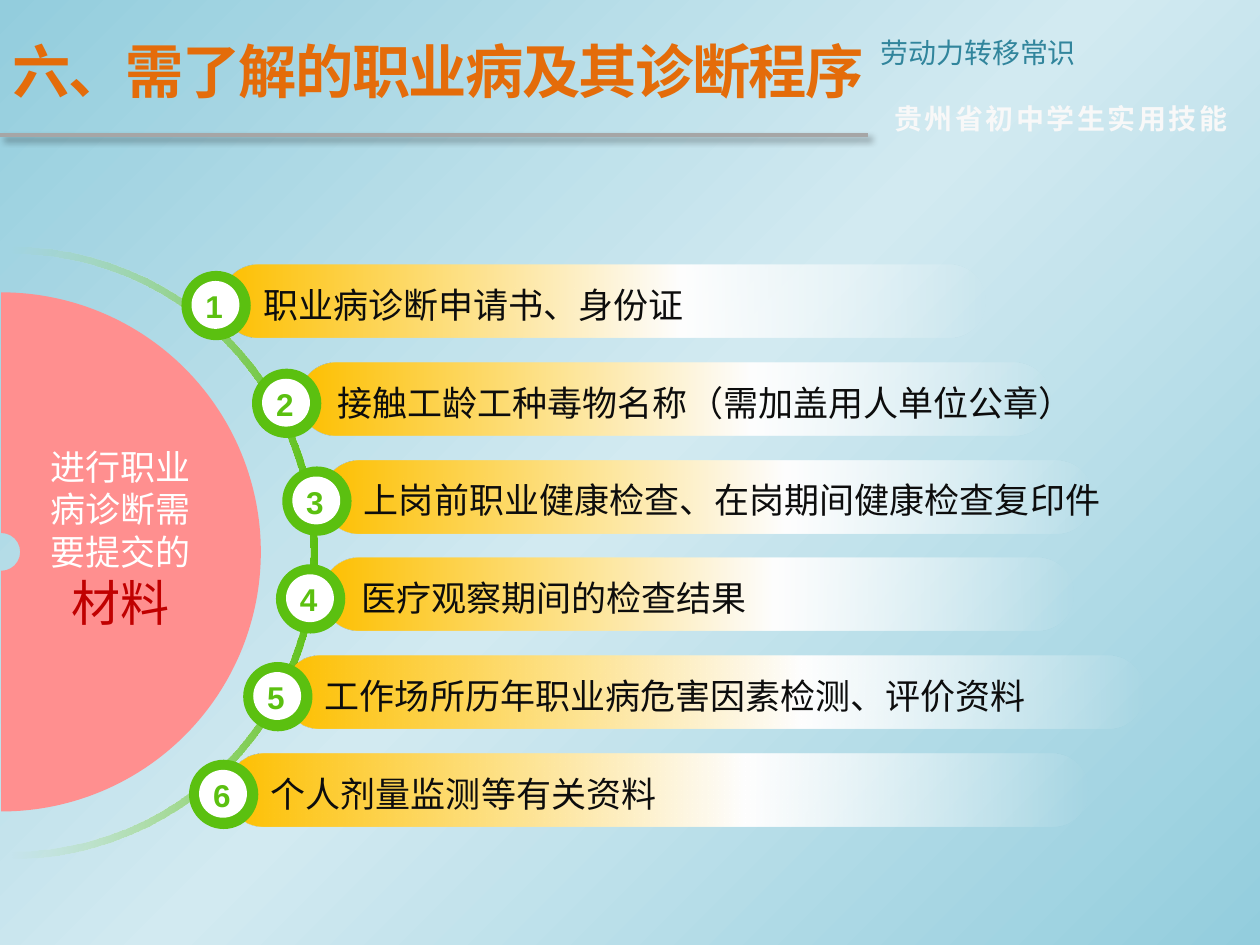
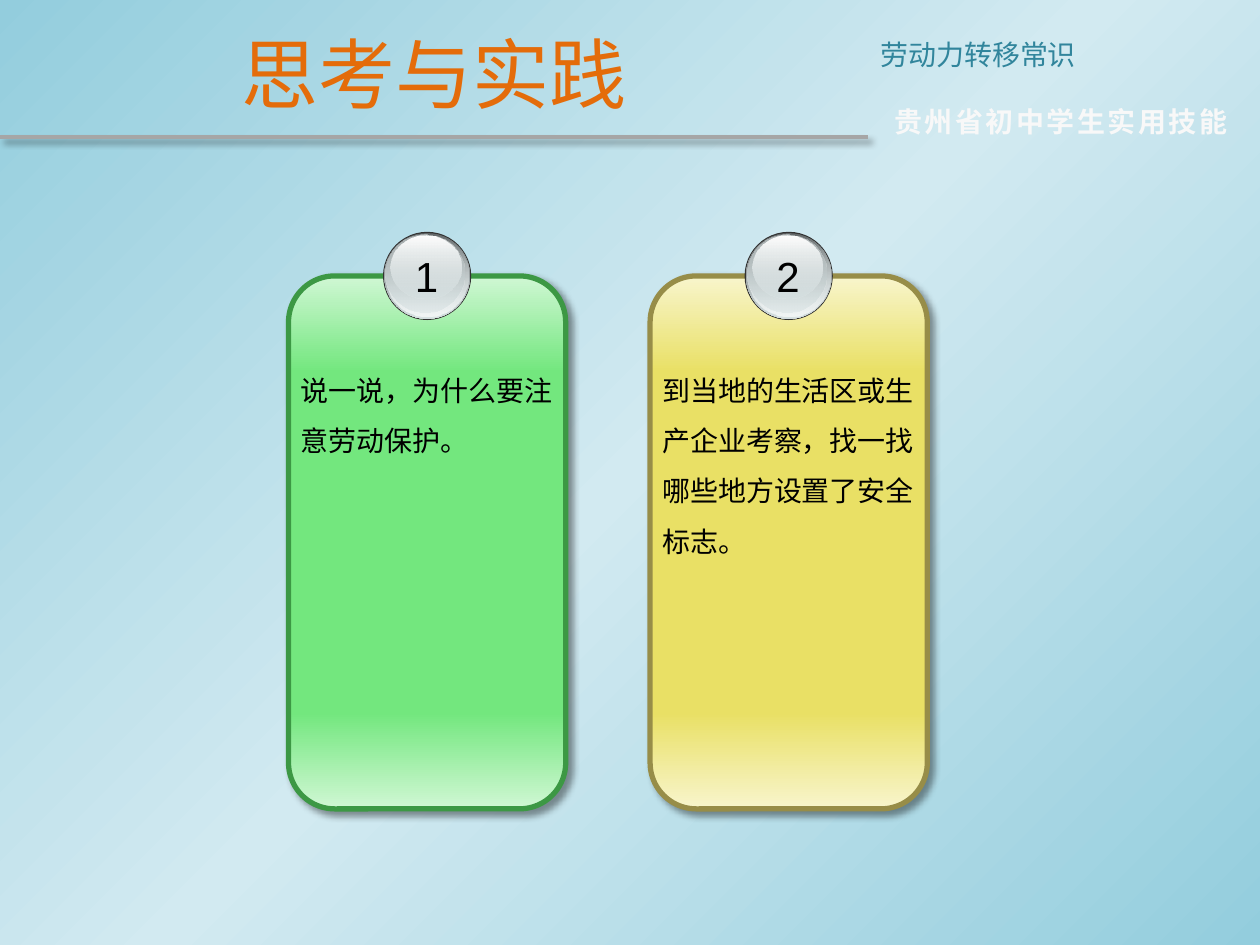
from dataclasses import dataclass
from math import ceil

from lxml.etree import SubElement
from pptx import Presentation
from pptx.dml.color import RGBColor
from pptx.enum.shapes import MSO_CONNECTOR, MSO_SHAPE
from pptx.enum.text import MSO_ANCHOR, MSO_AUTO_SIZE, PP_ALIGN
from pptx.oxml.ns import qn
from pptx.util import Inches, Pt


@dataclass(frozen=True)
class Box:
    left: float
    top: float
    width: float
    height: float

    def inner(self, left, top, width, height):
        """A box whose place is counted from this box's corner."""
        return Box(self.left + left, self.top + top, width, height)

    def emu(self):
        return [Inches(v) for v in (self.left, self.top, self.width, self.height)]


@dataclass(frozen=True)
class Style:
    size: float
    color: str
    font: str = "Noto Sans CJK SC"
    bold: bool = False
    spacing: float = 0


class Theme:
    # Gradient stops: position, colour, opacity in percent
    backdrop = [(0, "93CDDD", 100), (50, "D2EAF1", 100), (100, "93CDDD", 100)]
    bar = [(0, "FFC000", 100), (60, "FFFFFF", 100), (100, "FFFFFF", 0)]
    arc = [(0, "FFFFFF", 0), (100, "5BC010", 100)]
    green, white, pink, rule, rim = "5BC010", "FFFFFF", "FF8F8F", "A6A6A6", "333333"
    # Card colours: edge tint, body, outline
    green_card = ("D0F7D4", "73E77E", "3C9844")
    yellow_card = ("F8F5CC", "E9E065", "978D48")

    long_title = Style(33.3, "E46C0A", bold=True, spacing=-1)
    short_title = Style(44, "E46C0A")
    course = Style(16, "31859C")
    series = Style(16, "F8F8F8", bold=True, spacing=1.5)
    badge = Style(18, green, "Arial", True)
    label = Style(20, "0D0D0D")
    hub = Style(20, white)
    hub_key = Style(28, "C00000")
    body = Style(16, "000000")
    ball = Style(24, "000000", "Arial")


# Glossy ball layers: place inside the ball, then top and bottom stops
GLOSS = [
    ((0.01, 0.01, 0.68, 0.68), ("636869", 100), ("D6E1E2", 100)),
    ((0.02, 0.01, 0.66, 0.66), ("D6E1E2", 0), ("F1F5F5", 100)),
    ((0.02, 0.02, 0.63, 0.62), ("AAB2B3", 100), ("D6E1E2", 48)),
    ((0.06, 0.03, 0.56, 0.50), ("FFFFFF", 100), ("D6E1E2", 38)),
]

# Badge left, bar left, bar width, label left, label
MATERIALS = [
    (1.44, 1.76, 6.06, 1.99, "职业病诊断申请书、身份证"),
    (2.00, 2.38, 5.96, 2.58, "接触工龄工种毒物名称（需加盖用人单位公章）"),
    (2.24, 2.56, 6.11, 2.79, "上岗前职业健康检查、在岗期间健康检查复印件"),
    (2.19, 2.56, 5.96, 2.77, "医疗观察期间的检查结果"),
    (1.93, 2.25, 6.83, 2.48, "工作场所历年职业病危害因素检测、评价资料"),
    (1.50, 1.81, 6.83, 2.05, "个人剂量监测等有关资料"),
]

TASKS = [
    (Theme.green_card, "说一说，为什么要注意劳动保护。"),
    (Theme.yellow_card, "到当地的生活区或生产企业考察，找一找哪些地方设置了安全标志。"),
]


# Drawing helpers
def color_stop(parent, color, opacity):
    node = SubElement(parent, qn("a:srgbClr"), val=color)
    if opacity < 100:
        SubElement(node, qn("a:alpha"), val=str(opacity * 1000))


def gradient(owner, fill, stops, angle):
    """Fill with the stops; the angle runs clockwise."""
    fill.gradient()
    fill.gradient_angle = -angle % 360
    stop_list = next(owner.element.iter(qn("a:gsLst")))
    for old in list(stop_list):
        stop_list.remove(old)
    for position, color, opacity in stops:
        stop = SubElement(stop_list, qn("a:gs"), pos=str(position * 1000))
        color_stop(stop, color, opacity)


def add_preset(page, kind, box, fill, angle=0):
    """A shape filled with one colour or with gradient stops, without line or shadow."""
    shape = page.shapes.add_shape(kind, *box.emu())
    shape.shadow.inherit = False
    shape.line.fill.background()
    if isinstance(fill, str):
        shape.fill.solid()
        shape.fill.fore_color.rgb = RGBColor.from_string(fill)
    else:
        gradient(shape, shape.fill, fill, angle)
    return shape


def set_line(shape, color, width):
    shape.line.color.rgb = RGBColor.from_string(color)
    shape.line.width = Pt(width)


def drop_shadow(shape):
    properties = shape.element.spPr
    effects = properties.find(qn("a:effectLst"))
    if effects is None:
        effects = SubElement(properties, qn("a:effectLst"))
    shadow = SubElement(effects, qn("a:outerShdw"), blurRad=str(Pt(4)),
                        dist=str(Pt(3)), dir="2700000", algn="tl", rotWithShape="0")
    color_stop(shadow, "000000", 40)


def add_text(page, box, spans, align=PP_ALIGN.LEFT, wrap=True, grow=True,
             anchor=MSO_ANCHOR.TOP, line_spacing=None):
    frame = page.shapes.add_textbox(*box.emu()).text_frame
    frame.word_wrap = wrap
    frame.auto_size = MSO_AUTO_SIZE.SHAPE_TO_FIT_TEXT if grow else MSO_AUTO_SIZE.NONE
    frame.vertical_anchor = anchor
    para = frame.paragraphs[0]
    para.alignment = align
    para.line_spacing = line_spacing
    for words, style in spans:
        span = para.add_run()
        span.text = words
        span.font.size = Pt(style.size)
        span.font.bold = style.bold
        span.font.name = style.font
        span.font.color.rgb = RGBColor.from_string(style.color)
        properties = span.font._element
        SubElement(properties, qn("a:ea"), typeface=style.font)
        if style.spacing:
            properties.set("spc", str(round(style.spacing * 100)))


def add_right_half_ring(page, box, thickness, fill):
    """The right half of a ring that fills the square box."""
    ring = add_preset(page, MSO_SHAPE.BLOCK_ARC, box, fill)
    # Angles count in 60000ths of a degree, adjustments in 100000ths
    ring.adjustments[0] = 270 * 0.6
    ring.adjustments[1] = 90 * 0.6
    ring.adjustments[2] = thickness / box.width


# Shared backdrop and header
def add_page(deck):
    page = deck.slides.add_slide(deck.slide_layouts[6])
    gradient(page, page.background.fill, Theme.backdrop, 45)
    return page


def add_header(page, box, title, style, align):
    rule_y = Inches(box.top + box.height)
    rule = page.shapes.add_connector(
        MSO_CONNECTOR.STRAIGHT, Inches(box.left), rule_y, Inches(6.89), rule_y)
    set_line(rule, Theme.rule, 2.25)
    drop_shadow(rule)
    add_text(page, box.inner(6.89, 0.18, 3.11, 0.37),
             [("劳动力转移常识", Theme.course)], PP_ALIGN.JUSTIFY)
    add_text(page, box.inner(7, 0.71, 3, 0.37),
             [("贵州省初中学生实用技能", Theme.series)])
    add_text(page, box, [(title, style)], align, grow=False, anchor=MSO_ANCHOR.MIDDLE)


# Slide 1: hub on the left, numbered bars along its arc
def add_hub(page, box):
    add_right_half_ring(page, box, 0.06, Theme.arc)
    add_right_half_ring(page, box.inner(0.28, 0.36, 4.12, 4.12), 1.91, Theme.pink)


def add_material(page, box, number, badge_left, label_left, label):
    bar = add_preset(page, MSO_SHAPE.ROUNDED_RECTANGLE, box, Theme.bar)
    bar.adjustments[0] = 0.5
    badge = Box(badge_left, box.top + 0.05, 0.55, 0.55)
    add_preset(page, MSO_SHAPE.OVAL, badge, Theme.green)
    add_preset(page, MSO_SHAPE.OVAL, badge.inner(0.08, 0.08, 0.38, 0.38), Theme.white)
    add_text(page, badge.inner(0.09, 0.08, 0.34, 0.4),
             [(str(number), Theme.badge)], PP_ALIGN.CENTER, wrap=False)
    label_box = Box(label_left, box.top + 0.1, len(label) * 0.28 + 0.21, 0.44)
    add_text(page, label_box, [(label, Theme.label)], wrap=False)


def materials_slide(deck):
    page = add_page(deck)
    add_header(page, Box(0, 0.05, 6.97, 1.02), "六、需了解的职业病及其诊断程序",
               Theme.long_title, PP_ALIGN.LEFT)
    add_hub(page, Box(-2.33, 1.96, 4.85, 4.85))
    first, last = 2.1, 5.98
    pitch = (last - first) / (len(MATERIALS) - 1)
    for i, (badge_left, bar_left, width, label_left, label) in enumerate(MATERIALS):
        add_material(page, Box(bar_left, first + i * pitch, width, 0.58),
                     i + 1, badge_left, label_left, label)
    add_text(page, Box(0.21, 3.49, 1.5, 1.58),
             [("进行职业病诊断需要提交的", Theme.hub), ("材料", Theme.hub_key)],
             PP_ALIGN.CENTER)


# Slide 2: task cards topped by glossy balls
def add_ball(page, box, number):
    add_preset(page, MSO_SHAPE.OVAL, box, Theme.rim)
    for place, top, bottom in GLOSS:
        add_preset(page, MSO_SHAPE.OVAL, box.inner(*place),
                   [(0, *top), (100, *bottom)], 90)
    add_text(page, box.inner(0.15, 0.1, 0.39, 0.5),
             [(str(number), Theme.ball)], PP_ALIGN.CENTER, wrap=False)


def add_card(page, box, number, colors, task):
    tint, body, outline = colors
    stops = [(0, tint, 100), (18, body, 100), (82, body, 100), (100, tint, 100)]
    card = add_preset(page, MSO_SHAPE.ROUNDED_RECTANGLE, box, stops, 90)
    set_line(card, outline, 3)
    drop_shadow(card)
    lines = ceil(len(task) / 9)
    add_text(page, box.inner(0, 0.59, box.width, lines * 0.4 + 0.1),
             [(task, Theme.body)], line_spacing=1.5)
    add_ball(page, box.inner((box.width - 0.7) / 2, -0.35, 0.7, 0.7), number)


def tasks_slide(deck):
    page = add_page(deck)
    add_header(page, Box(0, 0.07, 6.89, 1.02), "思考与实践",
               Theme.short_title, PP_ALIGN.CENTER)
    for i, (colors, task) in enumerate(TASKS):
        add_card(page, Box(2.29 + i * 2.87, 2.19, 2.2, 4.23), i + 1, colors, task)


def main():
    deck = Presentation()
    deck.slide_width, deck.slide_height = Inches(10), Inches(7.5)
    materials_slide(deck)
    tasks_slide(deck)
    deck.save("out.pptx")


if __name__ == "__main__":
    main()
